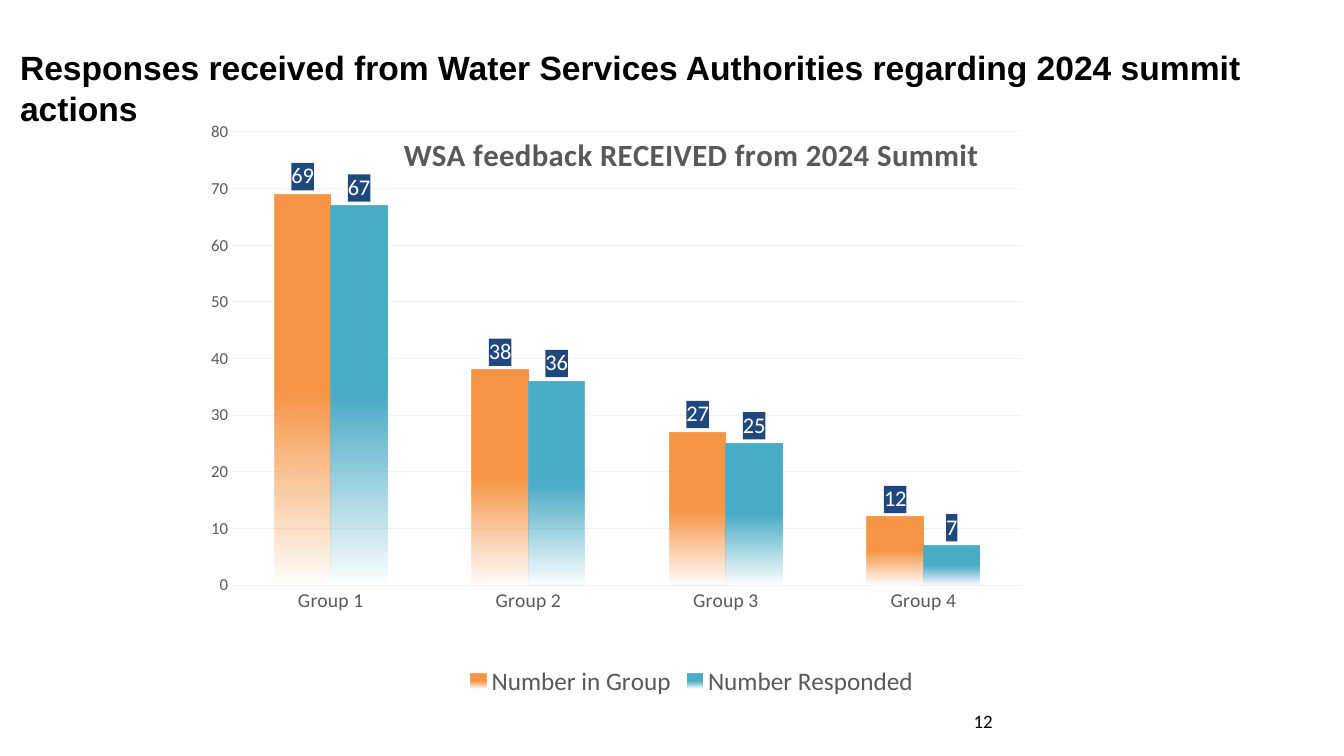
from lxml.etree import fromstring
from pptx import Presentation
from pptx.chart.data import CategoryChartData
from pptx.dml.color import RGBColor
from pptx.enum.chart import XL_CHART_TYPE, XL_LABEL_POSITION, XL_LEGEND_POSITION, XL_TICK_MARK
from pptx.enum.text import MSO_ANCHOR
from pptx.oxml.ns import nsdecls
from pptx.util import Pt

BLACK = RGBColor(0x00, 0x00, 0x00)
WHITE = RGBColor(0xFF, 0xFF, 0xFF)
GREY = RGBColor(0x59, 0x59, 0x59)
GRID = RGBColor(0xF2, 0xF2, 0xF2)
NAVY = RGBColor(0x1F, 0x49, 0x7D)
ORANGE = RGBColor(0xF7, 0x96, 0x46)
TEAL = RGBColor(0x4B, 0xAC, 0xC6)

GROUPS = ["Group 1", "Group 2", "Group 3", "Group 4"]
RESPONSES = [
    ("Number in Group", [69, 38, 27, 12], ORANGE),
    ("Number Responded", [67, 36, 25, 7], TEAL),
]


def style_font(font, size, color, name="Calibri", bold=False):
    font.size = Pt(size)
    font.name = name
    font.bold = bold
    font.color.rgb = color


def add_text(slide, box, text, anchor=MSO_ANCHOR.TOP, **font_format):
    frame = slide.shapes.add_textbox(*map(Pt, box)).text_frame
    frame.word_wrap = True
    frame.vertical_anchor = anchor
    run = frame.paragraphs[0].add_run()
    run.text = text
    style_font(run.font, **font_format)


def manual_layout(target, **fractions):
    values = "".join(f'<c:{key} val="{value}"/>' for key, value in fractions.items())
    return fromstring(
        f'<c:layout {nsdecls("c")}><c:manualLayout>{target}'
        f'<c:xMode val="edge"/><c:yMode val="edge"/>{values}'
        "</c:manualLayout></c:layout>"
    )


def replace_layout(parent, layout, position):
    for old in parent.xpath("c:layout"):
        parent.remove(old)
    parent.insert(position, layout)


def fade_down(series, color):
    properties = series.format.fill._xPr
    properties.insert(0, fromstring(
        f'<a:gradFill {nsdecls("a")}><a:gsLst>'
        f'<a:gs pos="50000"><a:srgbClr val="{color}"/></a:gs>'
        f'<a:gs pos="100000"><a:srgbClr val="{color}"><a:alpha val="0"/></a:srgbClr></a:gs>'
        '</a:gsLst><a:lin ang="5400000" scaled="0"/></a:gradFill>'
    ))


def label_bars(series):
    labels = series.data_labels
    labels.show_value = True
    labels.position = XL_LABEL_POSITION.OUTSIDE_END
    style_font(labels.font, 16, WHITE)
    text_properties = labels._element.xpath("c:txPr")[0]
    text_properties.addprevious(fromstring(
        f'<c:spPr {nsdecls("c", "a")}><a:solidFill><a:srgbClr val="{NAVY}"/>'
        "</a:solidFill></c:spPr>"
    ))


def style_axis(axis, size):
    axis.major_tick_mark = XL_TICK_MARK.NONE
    axis.minor_tick_mark = XL_TICK_MARK.NONE
    axis.format.line.fill.background()
    style_font(axis.tick_labels.font, size, GREY)


def title_chart(chart):
    frame = chart.chart_title.text_frame
    run = frame.paragraphs[0].add_run()
    run.text = "WSA feedback RECEIVED from 2024 Summit"
    style_font(run.font, 22, GREY, bold=True)
    run.font._element.set("spc", "40")
    chart.chart_title.include_in_layout = True
    replace_layout(chart.chart_title._element, manual_layout("", x=0.21, y=0.04), 1)


def add_response_chart(slide, box):
    data = CategoryChartData()
    data.categories = GROUPS
    for name, counts, _ in RESPONSES:
        data.add_series(name, counts)
    chart = slide.shapes.add_chart(XL_CHART_TYPE.COLUMN_CLUSTERED, *map(Pt, box), data).chart
    style_font(chart.font, 10, BLACK)
    title_chart(chart)

    plot = chart.plots[0]
    plot.gap_width = 150
    plot.overlap = 0
    plot.vary_by_categories = False
    for series, (_, _, color) in zip(plot.series, RESPONSES):
        fade_down(series, color)
        label_bars(series)

    style_axis(chart.category_axis, 14)
    counts_axis = chart.value_axis
    style_axis(counts_axis, 12)
    counts_axis.minimum_scale = 0
    counts_axis.maximum_scale = 80
    counts_axis.major_unit = 10
    gridline = counts_axis.major_gridlines.format.line
    gridline.color.rgb = GRID
    gridline.width = Pt(0.75)

    chart.has_legend = True
    chart.legend.position = XL_LEGEND_POSITION.BOTTOM
    chart.legend.include_in_layout = False
    style_font(chart.legend.font, 18, GREY)

    plot_area = chart._chartSpace.xpath("c:chart/c:plotArea")[0]
    inner = '<c:layoutTarget val="inner"/>'
    replace_layout(plot_area, manual_layout(inner, x=0.046, y=0.047, w=0.78, h=0.758), 0)


def build_responses_slide(presentation):
    slide = presentation.slides.add_slide(presentation.slide_layouts[6])
    add_text(slide, (688.3, 500.4, 224, 28.8), "12", MSO_ANCHOR.MIDDLE, size=13.5, color=BLACK)
    add_response_chart(slide, (132.5, 74.2, 723.6, 427))
    add_text(
        slide, (7.2, 30.2, 925.2, 65.5),
        "Responses received from Water Services Authorities regarding 2024 summit actions",
        size=24, color=BLACK, name="Arial", bold=True,
    )


def main():
    presentation = Presentation()
    presentation.slide_width = Pt(960)
    presentation.slide_height = Pt(540)
    build_responses_slide(presentation)
    presentation.save("out.pptx")


if __name__ == "__main__":
    main()
